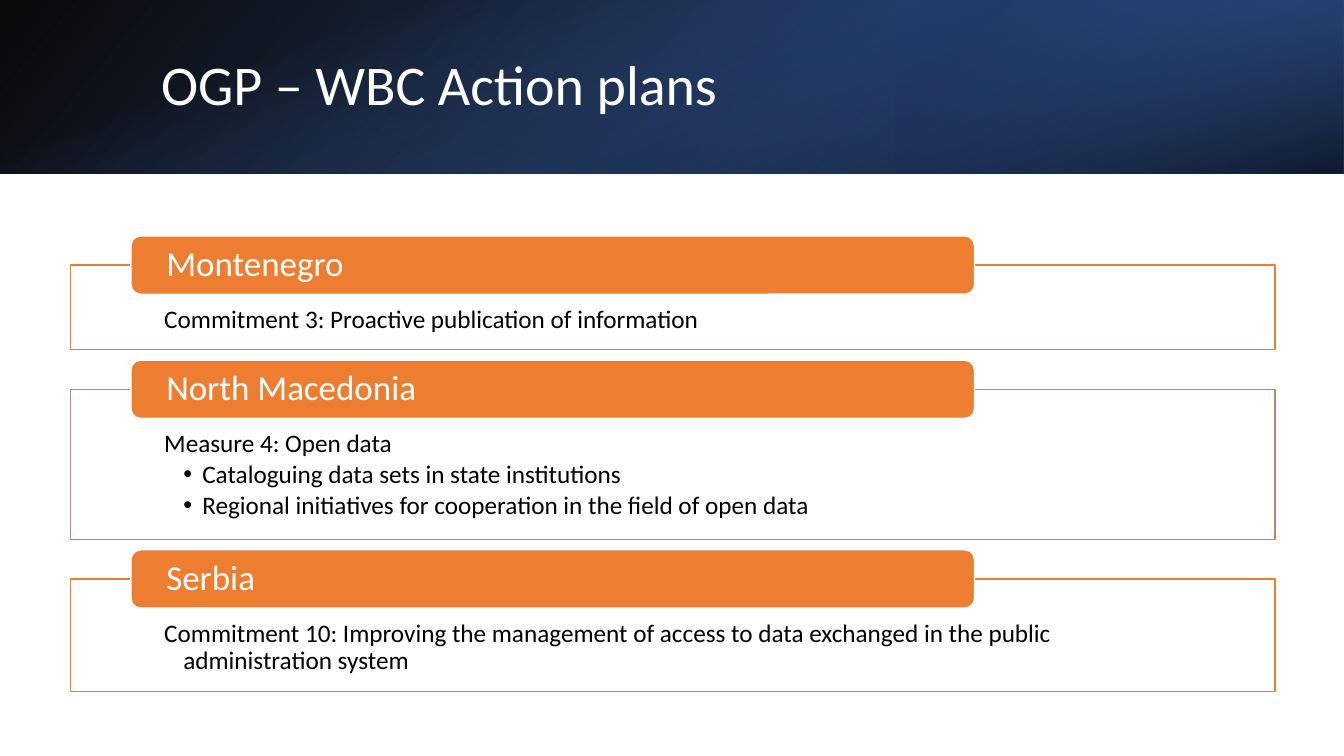
from dataclasses import dataclass
from typing import NamedTuple

from lxml.etree import SubElement
from pptx import Presentation
from pptx.dml.color import RGBColor
from pptx.enum.shapes import MSO_SHAPE as Preset
from pptx.enum.text import MSO_ANCHOR as Anchor, PP_ALIGN as Align
from pptx.oxml.ns import qn
from pptx.util import Cm, Pt


@dataclass(frozen=True)
class Theme:
    font: str = "Calibri"
    white: str = "FFFFFF"
    black: str = "000000"
    orange: str = "ED7D31"
    rose: str = "C48170"
    blue: str = "4472C4"
    deep_blue: str = "2F5597"
    navy: str = "203864"
    title_size: float = 40
    heading_size: float = 25
    body_size: float = 18


class Box(NamedTuple):
    left: float
    top: float
    width: float
    height: float


class Stop(NamedTuple):
    position: int
    color: str
    opacity: int


class Band(NamedTuple):
    box: Box
    angle: int
    stops: tuple[Stop, ...]
    rotation: int = 0
    flipped: bool = False


class Country(NamedTuple):
    name: str
    height: float
    outline: str
    commitment: str
    bullets: tuple[str, ...] = ()


THEME = Theme()
SLIDE_WIDTH, SLIDE_HEIGHT, BAND_HEIGHT = 33.87, 19.05, 4.37
PANEL_LEFT, PANEL_TOP, PANEL_WIDTH, PANEL_GAP = 1.78, 6.68, 30.35, 1.0
HEADING_LEFT, HEADING_WIDTH, HEADING_HEIGHT = 3.3, 21.26, 1.47
INDENT = 0.48
# The third band is a tall rectangle turned on its side
TURN_OFFSET = (SLIDE_WIDTH - BAND_HEIGHT) / 2

BANDS = (
    Band(Box(0, 0, SLIDE_WIDTH, BAND_HEIGHT), 140,
         (Stop(0, THEME.black, 96), Stop(100, THEME.deep_blue, 100)), flipped=True),
    Band(Box(22.58, 0, 11.29, BAND_HEIGHT), 320,
         (Stop(19, THEME.navy, 68), Stop(100, THEME.blue, 79)), 180, True),
    Band(Box(TURN_OFFSET, -TURN_OFFSET, BAND_HEIGHT, SLIDE_WIDTH), 340,
         (Stop(23, THEME.blue, 0), Stop(99, THEME.black, 74)), 90),
)

COUNTRIES = (
    Country("Montenegro", 2.13, THEME.orange,
            "Commitment 3: Proactive publication of information"),
    Country("North Macedonia", 3.78, THEME.rose, "Measure 4: Open data",
            ("Cataloguing data sets in state institutions",
             "Regional initiatives for cooperation in the field of open data")),
    Country("Serbia", 2.84, THEME.orange,
            "Commitment 10: Improving the management of access to data "
            "exchanged in the public administration system"),
)


def place(box: Box) -> tuple:
    return tuple(Cm(value) for value in box)


def add_box(slide, preset, box: Box, fill: str, line: str):
    shape = slide.shapes.add_shape(preset, *place(box))
    shape.shadow.inherit = False
    shape.fill.solid()
    shape.fill.fore_color.rgb = RGBColor.from_string(fill)
    shape.line.color.rgb = RGBColor.from_string(line)
    shape.line.width = Pt(1)
    return shape


def set_frame(shape, anchor, insets: Box | tuple) -> None:
    frame = shape.text_frame
    frame.word_wrap = True
    frame.vertical_anchor = anchor
    (frame.margin_left, frame.margin_top,
     frame.margin_right, frame.margin_bottom) = (Cm(inset) for inset in insets)


def write(paragraph, text: str, *, size: float, color: str, after: float = 0,
          margin: float = 0, hanging: float = 0, bullet: str = "") -> None:
    paragraph.alignment = Align.LEFT
    paragraph.line_spacing = 0.9
    paragraph.space_after = Pt(after)
    run = paragraph.add_run()
    run.text = text
    run.font.name = THEME.font
    run.font.size = Pt(size)
    run.font.color.rgb = RGBColor.from_string(color)
    properties = paragraph._p.get_or_add_pPr()
    properties.set("marL", str(Cm(margin)))
    properties.set("indent", str(-Cm(hanging)))
    if bullet:
        SubElement(properties, qn("a:buFont"), typeface="Arial")
        SubElement(properties, qn("a:buChar"), char=bullet)
    else:
        SubElement(properties, qn("a:buNone"))


def draw_band(slide, band: Band) -> None:
    shape = slide.shapes.add_shape(Preset.RECTANGLE, *place(band.box))
    shape.shadow.inherit = False
    shape.line.fill.background()
    shape.rotation = band.rotation
    if band.flipped:
        shape._element.spPr.find(qn("a:xfrm")).set("flipH", "1")
    # Gradient with transparent stops
    shape.fill.gradient()
    gradient = shape._element.spPr.find(qn("a:gradFill"))
    gradient.set("rotWithShape", "1")
    for child in list(gradient):
        gradient.remove(child)
    stop_list = SubElement(gradient, qn("a:gsLst"))
    for stop in band.stops:
        mark = SubElement(stop_list, qn("a:gs"), pos=str(stop.position * 1000))
        color = SubElement(mark, qn("a:srgbClr"), val=stop.color)
        SubElement(color, qn("a:alpha"), val=str(stop.opacity * 1000))
    SubElement(gradient, qn("a:lin"), ang=str(band.angle * 60000), scaled="0")


def draw_country(slide, country: Country, top: float) -> None:
    # Outlined panel with the commitments
    panel = add_box(slide, Preset.RECTANGLE,
                    Box(PANEL_LEFT, top, PANEL_WIDTH, country.height),
                    THEME.white, country.outline)
    set_frame(panel, Anchor.TOP, (2.36, 1.04, 2.36, 0.36))
    body = {"size": THEME.body_size, "color": THEME.black,
            "after": 2.7, "hanging": INDENT}
    write(panel.text_frame.paragraphs[0], country.commitment, margin=INDENT, **body)
    for text in country.bullets:
        write(panel.text_frame.add_paragraph(), text,
              margin=2 * INDENT, bullet="•", **body)

    # Heading centred on the panel's top edge
    heading = add_box(slide, Preset.ROUNDED_RECTANGLE,
                      Box(HEADING_LEFT, top - HEADING_HEIGHT / 2,
                          HEADING_WIDTH, HEADING_HEIGHT),
                      THEME.orange, THEME.white)
    set_frame(heading, Anchor.MIDDLE, (0.82, 0, 0.82, 0))
    write(heading.text_frame.paragraphs[0], country.name,
          size=THEME.heading_size, color=THEME.white)


def main() -> None:
    presentation = Presentation()
    presentation.slide_width = Cm(SLIDE_WIDTH)
    presentation.slide_height = Cm(SLIDE_HEIGHT)
    slide = presentation.slides.add_slide(presentation.slide_layouts[6])

    # Title band
    for band in BANDS:
        draw_band(slide, band)
    title = slide.shapes.add_textbox(*place(Box(3.81, 0.97, 27.89, 2.44)))
    set_frame(title, Anchor.MIDDLE, (0.25, 0.13, 0.25, 0.13))
    write(title.text_frame.paragraphs[0], "OGP – WBC Action plans",
          size=THEME.title_size, color=THEME.white)

    # Country panels, stacked with equal gaps
    top = PANEL_TOP
    for country in COUNTRIES:
        draw_country(slide, country, top)
        top += country.height + PANEL_GAP

    presentation.save("out.pptx")


if __name__ == "__main__":
    main()
